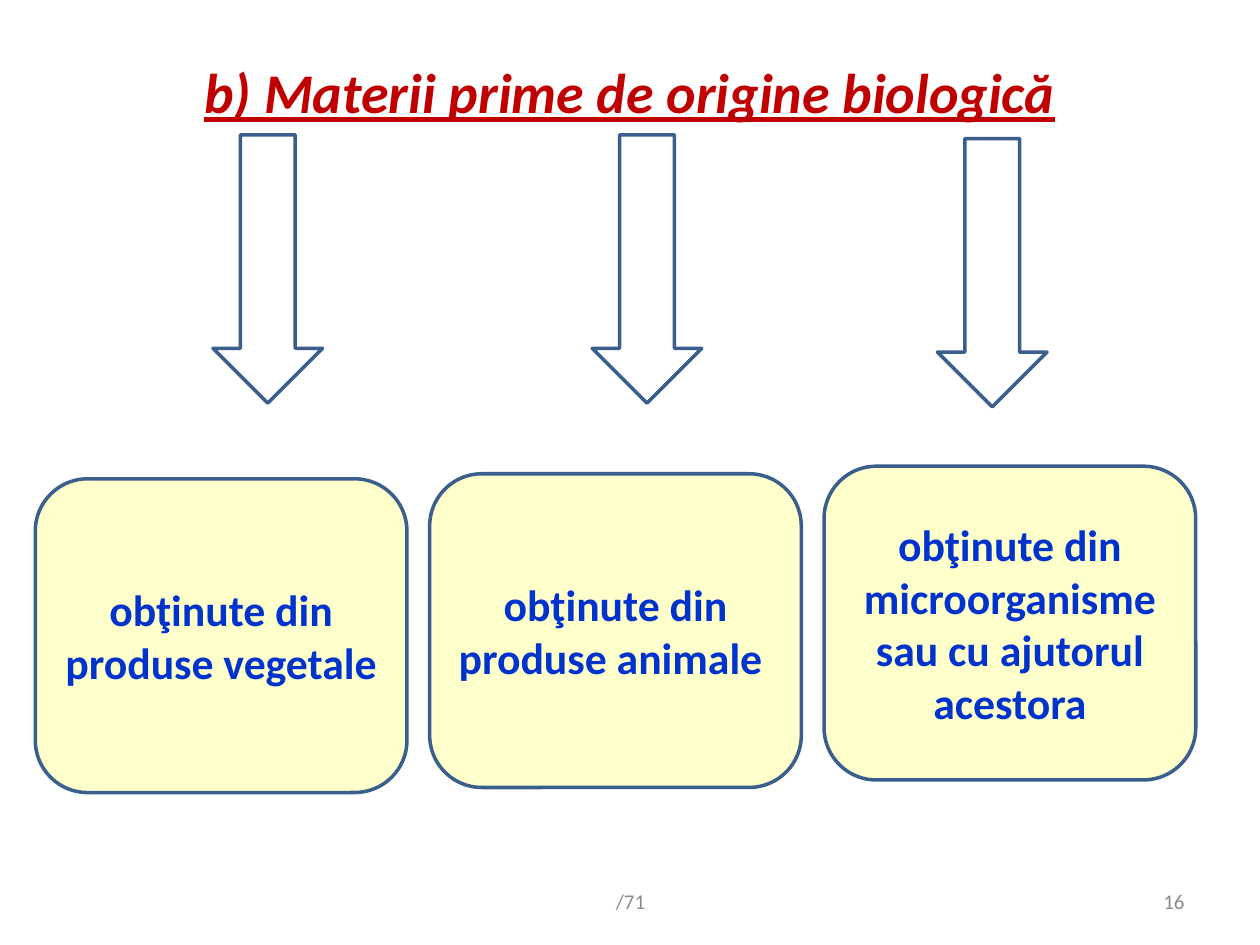
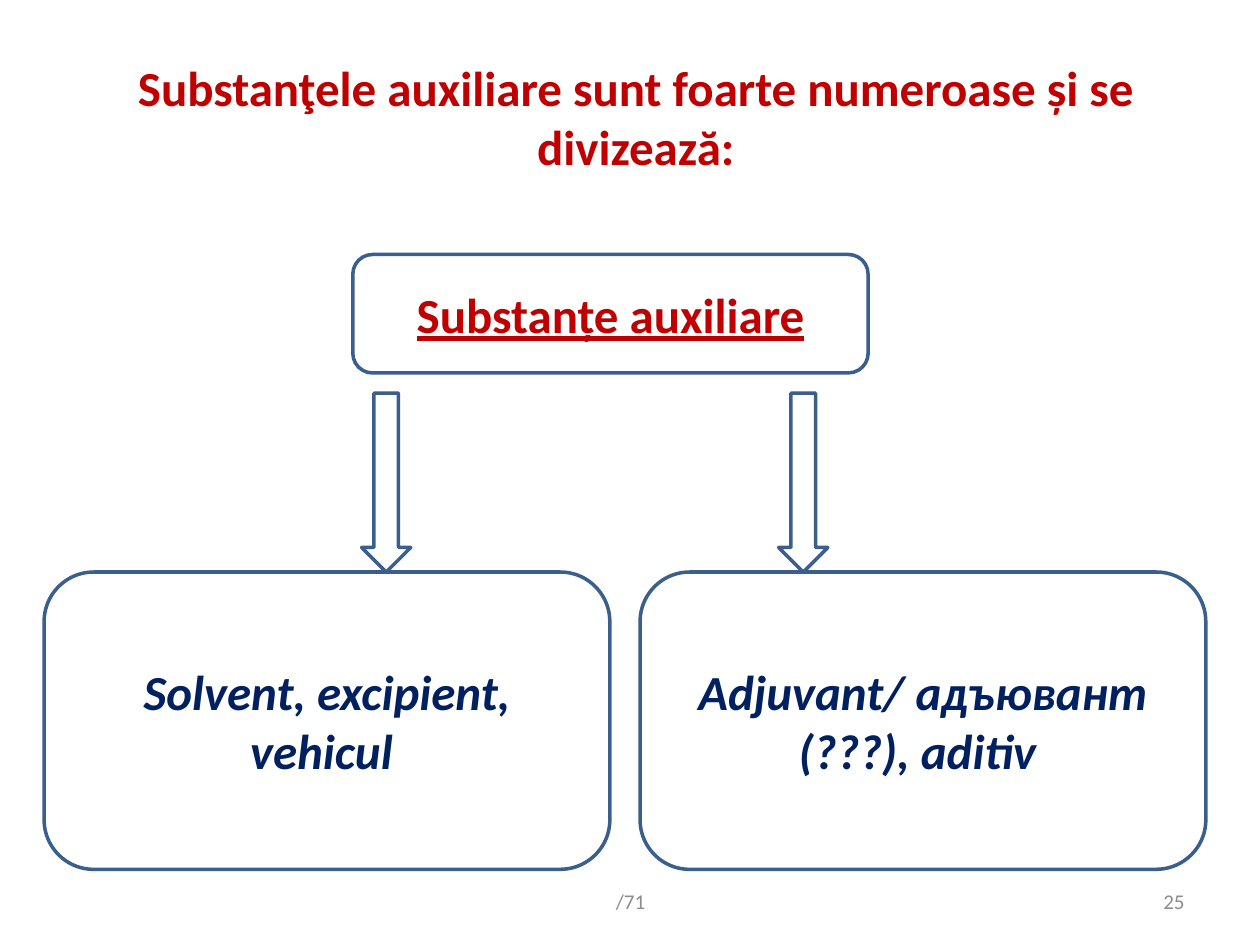
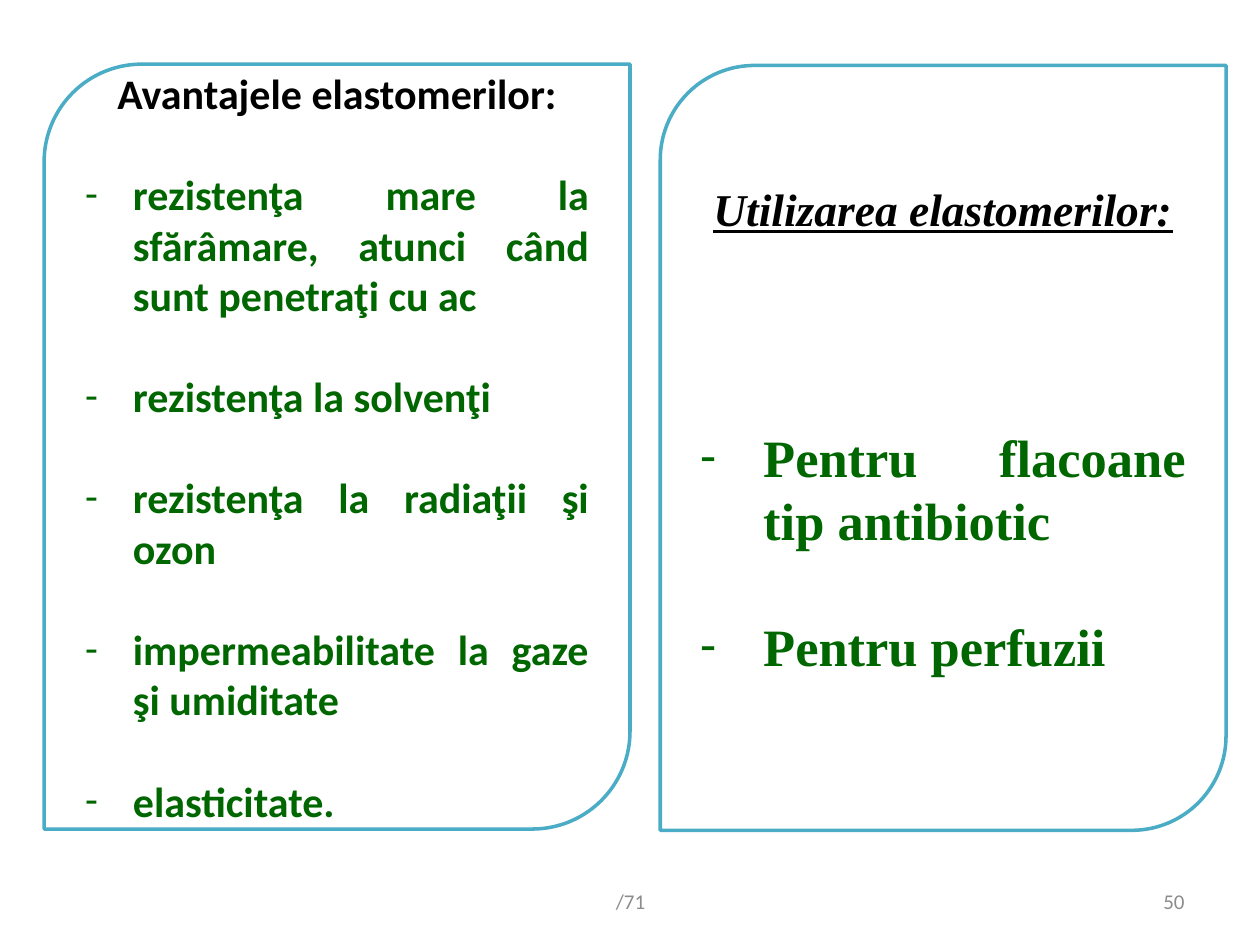
import dataclasses

import pptx
import pptx.dml.color
import pptx.enum.shapes
import pptx.enum.text
import pptx.oxml.xmlchemy
import pptx.util
from lxml import etree

Inches = pptx.util.Inches
Pt = pptx.util.Pt
Shape = pptx.enum.shapes.MSO_SHAPE
Align = pptx.enum.text.PP_ALIGN
Anchor = pptx.enum.text.MSO_ANCHOR


@dataclasses.dataclass(frozen=True)
class Theme:
    font: str = "Calibri"
    serif: str = "Times New Roman"
    white: str = "FFFFFF"
    black: str = "000000"
    red: str = "C00000"
    blue: str = "0033CC"
    navy: str = "002060"
    green: str = "006600"
    gray: str = "8C8C8C"
    cream: str = "FFFFCC"
    edge: str = "3A5F8C"
    teal: str = "4BACC6"
    line: float = 2
    small: int = 12
    list: int = 24
    box: int = 25
    use: int = 26
    head: int = 28
    large: int = 30
    title: int = 32


THEME = Theme()


def color(code):
    return pptx.dml.color.RGBColor.from_string(code)


def write(para, text, size, ink, font=THEME.font, bold=True, italic=False,
          under=False, align=Align.CENTER, before=0, pitch=None):
    run = para.add_run()
    run.text = text
    face = run.font
    face.name, face.size = font, Pt(size)
    face.bold, face.italic, face.underline = bold, italic, under
    face.color.rgb = color(ink)
    para.alignment = align
    para.space_before = Pt(before)
    if pitch:
        para.line_spacing = Pt(pitch)


def dash(para, indent):
    """Give the paragraph a hanging dash bullet."""
    props = para._p.get_or_add_pPr()
    props.set("marL", str(Inches(indent)))
    props.set("indent", str(-Inches(indent)))
    space = props.nsmap["a"]
    face = etree.SubElement(props, f"{{{space}}}buFont")
    face.set("typeface", THEME.font)
    mark = etree.SubElement(props, f"{{{space}}}buChar")
    mark.set("char", "-")


def label(slide, area, text, size, ink, **style):
    frame = slide.shapes.add_textbox(*map(Inches, area)).text_frame
    frame.word_wrap = True
    frame.vertical_anchor = Anchor.MIDDLE
    write(frame.paragraphs[0], text, size, ink, **style)


def draw(slide, kind, area, fill=THEME.white, edge=THEME.edge):
    shape = slide.shapes.add_shape(kind, *map(Inches, area))
    shape.shadow.inherit = False
    shape.fill.solid()
    shape.fill.fore_color.rgb = color(fill)
    shape.line.color.rgb = color(edge)
    shape.line.width = Pt(THEME.line)
    frame = shape.text_frame
    frame.word_wrap = True
    frame.vertical_anchor = Anchor.MIDDLE
    return frame


def arrow(slide, area):
    draw(slide, Shape.DOWN_ARROW, area)


def box(slide, area, text, size, ink, fill=THEME.white, **style):
    frame = draw(slide, Shape.ROUNDED_RECTANGLE, area, fill)
    write(frame.paragraphs[0], text, size, ink, **style)


def panel(slide, area, head, style, items, size, indent, gaps, **form):
    """Draw a heading over dash items, with one gap above each item."""
    frame = draw(slide, Shape.ROUND_2_DIAG_RECTANGLE, area, edge=THEME.teal)
    write(frame.paragraphs[0], head, **style)
    for item, gap in zip(items, gaps):
        para = frame.add_paragraph()
        write(para, item, size, THEME.green, align=Align.JUSTIFY,
              before=gap, **form)
        dash(para, indent)
    return frame


def footer(slide, number):
    label(slide, (3.42, 6.95, 3.17, 0.4), "/71", THEME.small, THEME.gray,
          bold=False)
    label(slide, (7.17, 6.95, 2.33, 0.4), str(number), THEME.small,
          THEME.gray, bold=False, align=Align.RIGHT)


def origins(slide):
    label(slide, (0.5, 0.3, 9, 0.85), "b) Materii prime de origine biologică",
          THEME.title, THEME.red, italic=True, under=True)
    for left, top in ((1.69, 1.07), (4.7, 1.07), (7.44, 1.1)):
        arrow(slide, (left, top, 0.87, 2.13))
    sources = (
        ("obţinute din produse vegetale", 3.8),
        ("obţinute din produse animale ", 3.76),
        ("obţinute din microorganisme sau cu ajutorul acestora", 3.7),
    )
    for col, (text, top) in enumerate(sources):
        box(slide, (0.28 + 3.13 * col, top, 2.95, 2.49), text, THEME.box,
            THEME.blue, THEME.cream)


def helpers(slide):
    label(slide, (0.2, 0.3, 9.69, 1.25),
          "Substanţele auxiliare sunt foarte numeroase și se divizează:",
          THEME.head, THEME.red)
    box(slide, (2.8, 2.02, 4.09, 0.94), "Substanțe auxiliare", THEME.head,
        THEME.red, under=True)
    groups = ("Solvent, excipient, vehicul ",
              "Adjuvant/ адъювант (???), aditiv ")
    for col, text in enumerate(groups):
        arrow(slide, (2.87 + 3.31 * col, 3.12, 0.39, 1.42))
        box(slide, (0.35 + 4.73 * col, 4.54, 4.49, 2.36), text, THEME.head,
            THEME.navy, italic=True)


def rubber(slide):
    merits = (
        "rezistenţa mare la sfărâmare, atunci când sunt penetraţi cu ac",
        "rezistenţa la solvenţi",
        "rezistenţa la radiaţii şi ozon",
        "impermeabilitate la gaze şi umiditate",
        "elasticitate.",
    )
    panel(slide, (0.35, 0.51, 4.65, 6.07), "Avantajele elastomerilor:",
          dict(size=THEME.list, ink=THEME.black), merits, THEME.list, 0.38,
          [29] * len(merits))
    uses = ("Pentru flacoane tip antibiotic", "Pentru perfuzii")
    frame = panel(slide, (5.24, 0.52, 4.49, 6.07),
                  "Utilizarea elastomerilor:",
                  dict(size=THEME.use, ink=THEME.black, font=THEME.serif,
                       italic=True, under=True),
                  uses, THEME.large, 0.5, (108, 36), font=THEME.serif,
                  pitch=36)
    frame.margin_bottom = Inches(0.35)


def main():
    deck = pptx.Presentation()
    deck.slide_width, deck.slide_height = Inches(10), Inches(7.5)
    for build, number in ((origins, 16), (helpers, 25), (rubber, 50)):
        slide = deck.slides.add_slide(deck.slide_layouts[6])
        build(slide)
        footer(slide, number)
    deck.save("out.pptx")


if __name__ == "__main__":
    main()
